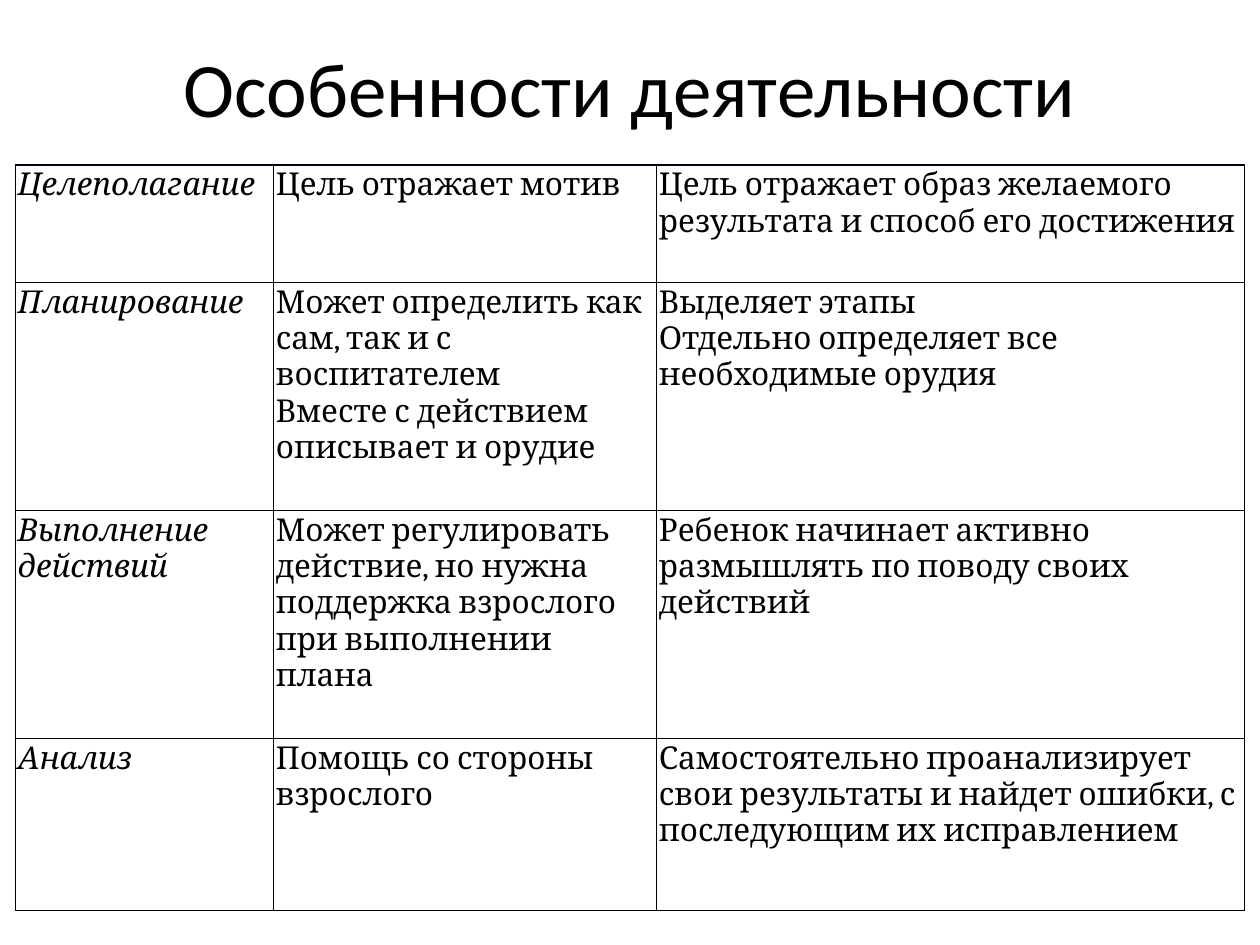
from dataclasses import dataclass

from lxml import etree
from pptx import Presentation
from pptx.dml.color import RGBColor
from pptx.enum.text import MSO_ANCHOR, PP_ALIGN
from pptx.oxml.ns import qn
from pptx.util import Inches, Pt

MIDDLE, TOP = MSO_ANCHOR.MIDDLE, MSO_ANCHOR.TOP
CENTER, LEFT = PP_ALIGN.CENTER, PP_ALIGN.LEFT
TITLE_ONLY = 5
SIDES = ("left", "right", "top", "bottom")


@dataclass(frozen=True)
class Theme:
    ink: str = "000000"
    paper: str = "FFFFFF"
    rule: str = "00000A"
    rule_pt: float = 0.75
    head_font: str = "Calibri"
    head_pt: int = 44
    body_font: str = "Cambria"
    body_pt: int = 18
    inset: float = 0.02


class Page:
    def __init__(self, deck, theme):
        self.theme = theme
        self.slide = deck.slides.add_slide(deck.slide_layouts[TITLE_ONLY])

    def put_text(self, frame, text, align, **style):
        """Fill a frame, one paragraph per line of text."""
        frame.word_wrap = True
        frame.text = text
        for par in frame.paragraphs:
            par.alignment = align
            font = par.runs[0].font
            font.color.rgb = RGBColor.from_string(self.theme.ink)
            for name, value in style.items():
                setattr(font, name, value)

    def title(self, text, box):
        shape = self.slide.shapes.title
        for name, value in zip(("left", "top", "width", "height"), box):
            setattr(shape, name, Inches(value))
        self.put_text(shape.text_frame, text, CENTER,
                      name=self.theme.head_font, size=Pt(self.theme.head_pt))
        shape.text_frame.vertical_anchor = MIDDLE

    def table(self, rows, left, top, widths, heights):
        """Draw a ruled grid whose first column is italic."""
        box = (left, top, sum(widths), sum(heights))
        grid = self.slide.shapes.add_table(
            len(heights), len(widths), *map(Inches, box)).table
        grid.first_row = grid.horz_banding = False
        for col, width in zip(grid.columns, widths):
            col.width = Inches(width)
        for row, height in zip(grid.rows, heights):
            row.height = Inches(height)
        for r, row in enumerate(rows):
            for c, text in enumerate(row):
                self.cell(grid.cell(r, c), text, italic=c == 0)

    def cell(self, cell, text, italic):
        self.put_text(cell.text_frame, text, LEFT, name=self.theme.body_font,
                      size=Pt(self.theme.body_pt), italic=italic)
        cell.vertical_anchor = TOP
        for side in SIDES:
            setattr(cell, f"margin_{side}", Inches(self.theme.inset))
        self.border(cell)
        cell.fill.solid()
        cell.fill.fore_color.rgb = RGBColor.from_string(self.theme.paper)

    def border(self, cell):
        props = cell._tc.get_or_add_tcPr()
        for side in SIDES:
            line = etree.SubElement(props, qn(f"a:ln{side[0].upper()}"),
                                    w=str(Pt(self.theme.rule_pt)))
            fill = etree.SubElement(line, qn("a:solidFill"))
            etree.SubElement(fill, qn("a:srgbClr"), val=self.theme.rule)


ROWS = [
    ("Целеполагание",
     "Цель отражает мотив",
     "Цель отражает образ желаемого результата и способ его достижения"),
    ("Планирование",
     "Может определить как сам, так и с воспитателем\n"
     "Вместе с действием описывает и орудие",
     "Выделяет этапы\nОтдельно определяет все необходимые орудия"),
    ("Выполнение действий",
     "Может регулировать действие, но нужна поддержка взрослого "
     "при выполнении плана",
     "Ребенок начинает активно размышлять по поводу своих действий"),
    ("Анализ",
     "Помощь со стороны взрослого",
     "Самостоятельно проанализирует свои результаты и найдет ошибки, "
     "с последующим их исправлением"),
]


def main():
    deck = Presentation()
    deck.slide_width, deck.slide_height = Inches(10), Inches(7.5)
    page = Page(deck, Theme())
    page.title("Особенности деятельности", (0.5, 0.3, 9, 0.77))
    page.table(ROWS, 0.12, 1.31, widths=(2.05, 3.04, 4.67),
               heights=(0.93, 1.81, 1.81, 1.37))
    deck.save("out.pptx")


if __name__ == "__main__":
    main()
